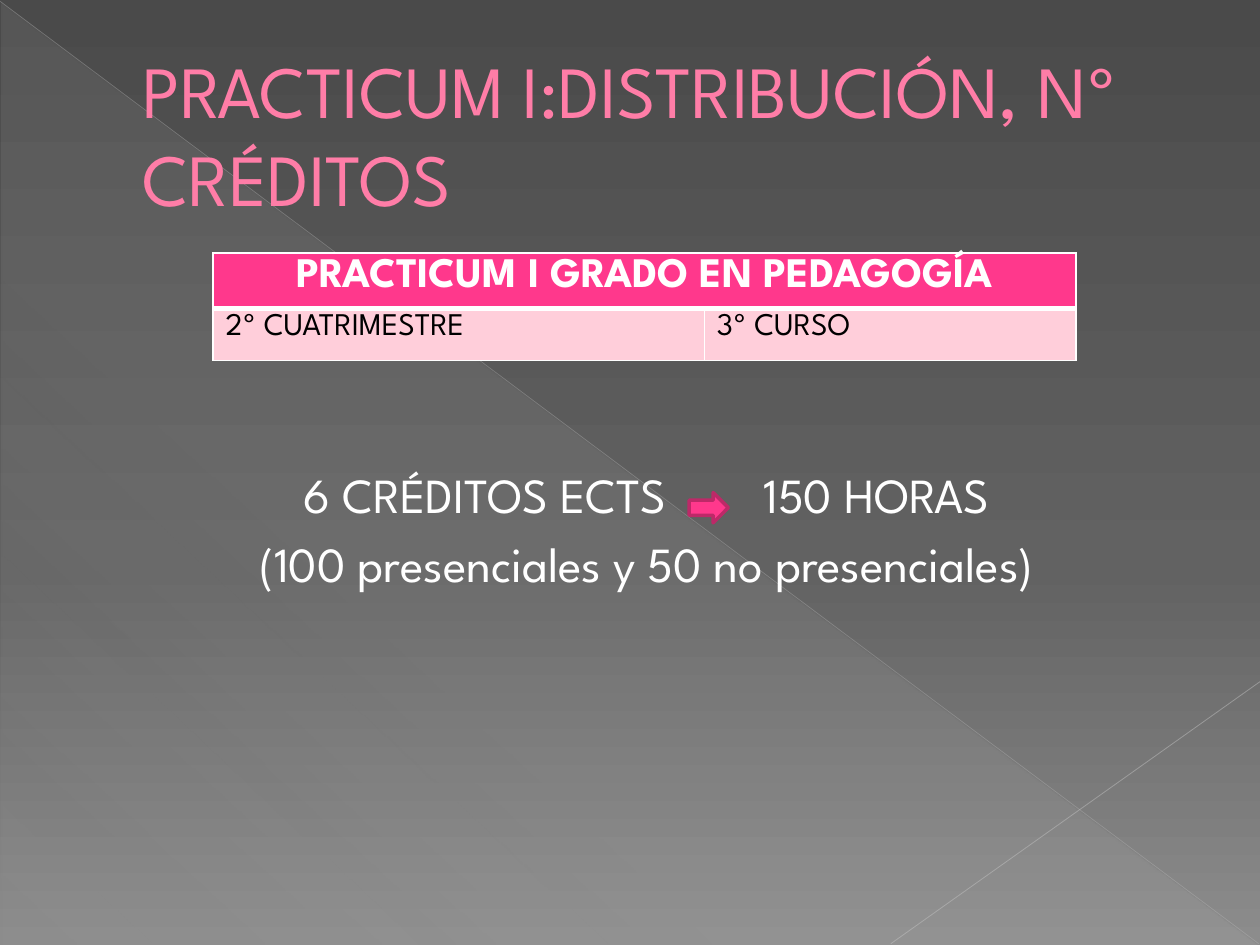
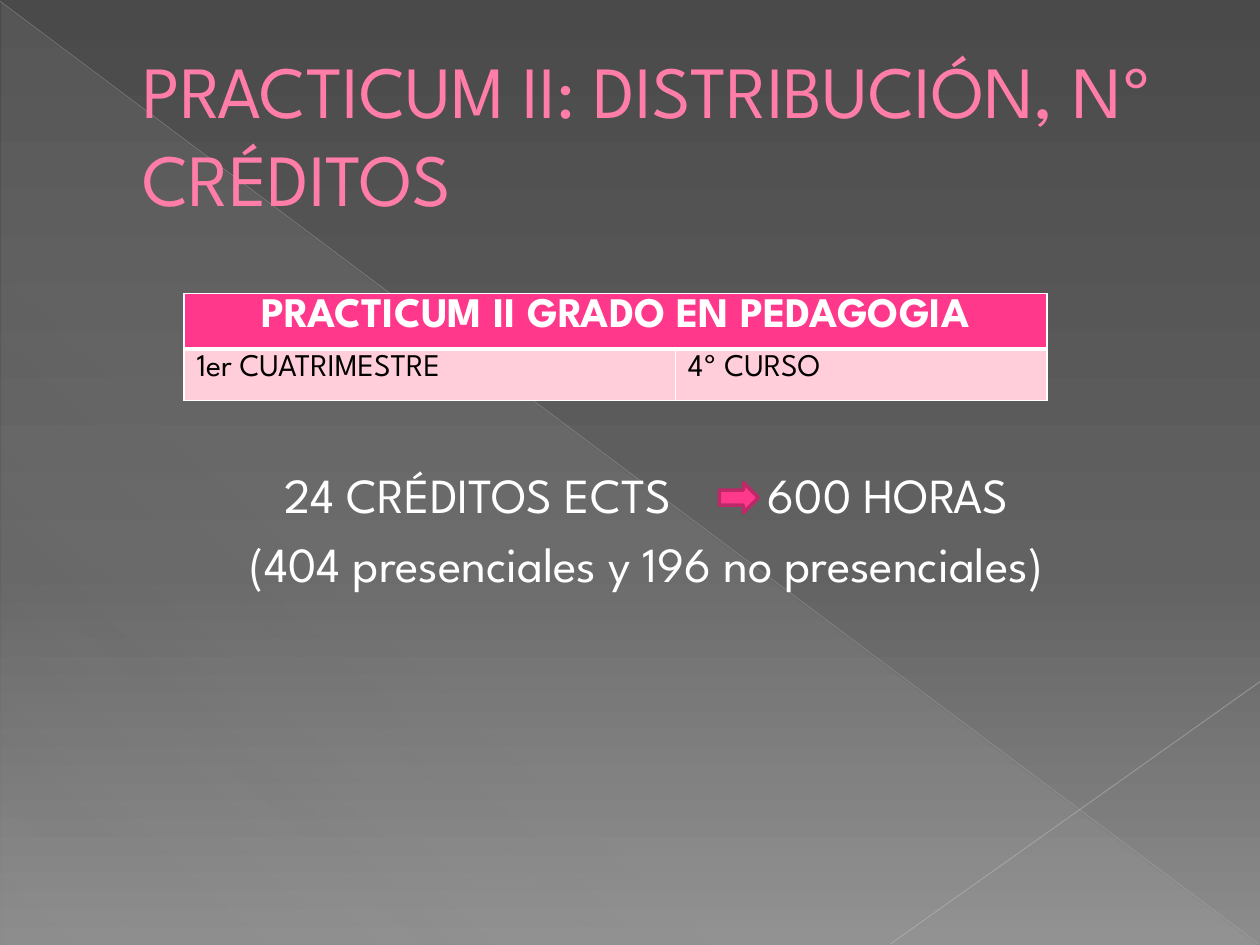
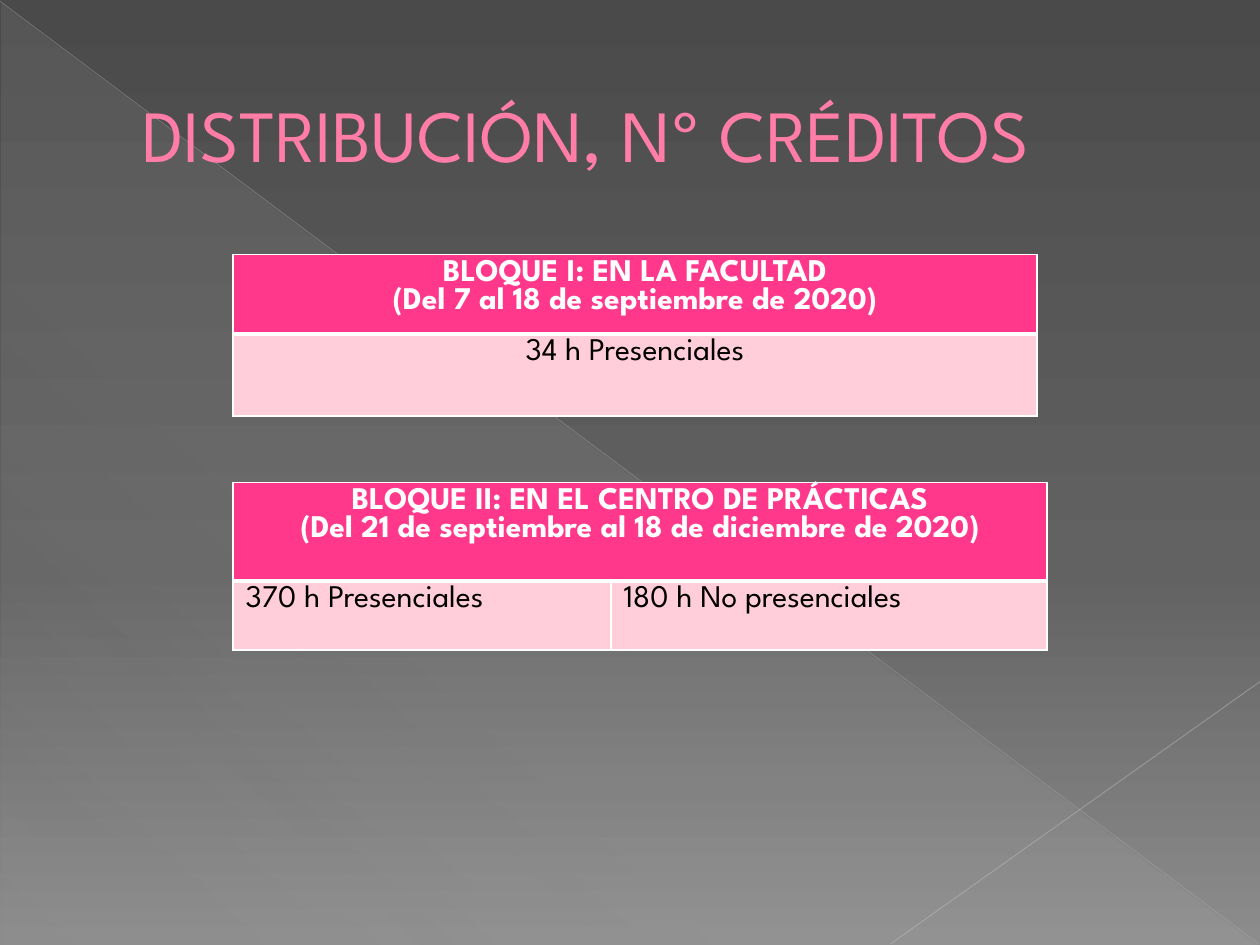
from lxml.etree import SubElement
from pptx import Presentation
from pptx.dml.color import RGBColor
from pptx.enum.shapes import MSO_CONNECTOR, MSO_SHAPE
from pptx.enum.text import MSO_ANCHOR, PP_ALIGN
from pptx.oxml.ns import qn
from pptx.util import Inches, Pt

FONT = "League Spartan"
WHITE, BLACK = "FFFFFF", "000000"
PINK, PALE_PINK, TITLE_PINK, DARK_PINK = "FF388C", "FFCEDA", "FF7DA7", "BD2968"
BACKDROP = [(0, "4A4A4A", 100), (60, "626262", 100), (100, "8C8C8C", 100)]
VEIL = [(0, "D2D2D2", 10), (70, "D2D2D2", 8), (100, "D2D2D2", 1)]
DIAGONALS = [((0, 0.01), (9.99, 7.49), "BFBFBF", 0.39, 35),
             ((10, 5.41), (7.07, 7.49), "C6C6C6", 0.47, 45)]
TITLE_BOX = (0.5, 0.29, 9, 1.53)
HOURS_BOX = (0.63, 3.64, 9, 1.2)


def rgb(value):
    return RGBColor.from_string(value)


def inches(*values):
    return [Inches(v) for v in values]


def set_all(target, **values):
    for name, value in values.items():
        setattr(target, name, value)


def set_alpha(color, percent):
    SubElement(color, qn("a:alpha")).set("val", str(percent * 1000))


def set_gradient(fill, element, stops, angle):
    """Fill with (position, colour, opacity) stops, the angle running clockwise."""
    fill.gradient()
    grad = element.xpath(".//a:gradFill")[0]
    for child in list(grad):
        grad.remove(child)
    stop_list = SubElement(grad, qn("a:gsLst"))
    for position, value, opacity in stops:
        stop = SubElement(stop_list, qn("a:gs"))
        stop.set("pos", str(position * 1000))
        color = SubElement(stop, qn("a:srgbClr"))
        color.set("val", value)
        set_alpha(color, opacity)
    SubElement(grad, qn("a:lin")).set("ang", str(angle * 60000))


def add_run(p, text, size, color, bold=False):
    r = p.add_run()
    r.text = text
    set_all(r.font, name=FONT, size=Pt(size), bold=bold)
    r.font.color.rgb = rgb(color)
    return r


def add_text_box(s, box):
    tf = s.shapes.add_textbox(*inches(*box)).text_frame
    tf.word_wrap = True
    return tf


def add_backdrop(s):
    set_gradient(s.background.fill, s.element, BACKDROP, 90)
    veil = s.shapes.add_shape(MSO_SHAPE.RIGHT_TRIANGLE, *inches(0.01, 0.02, 9.98, 7.48))
    veil.shadow.inherit = False
    veil.line.fill.background()
    set_gradient(veil.fill, veil.element, VEIL, 133)
    for start, end, color, width, opacity in DIAGONALS:
        line = s.shapes.add_connector(MSO_CONNECTOR.STRAIGHT, *inches(*start, *end))
        line.line.color.rgb = rgb(color)
        line.line.width = Pt(width)
        set_alpha(line.element.xpath(".//a:ln//a:srgbClr")[0], opacity)
        SubElement(line.element.spPr, qn("a:effectLst"))


def add_title(s, text):
    tf = add_text_box(s, TITLE_BOX)
    set_all(tf, vertical_anchor=MSO_ANCHOR.MIDDLE, margin_left=Inches(0.63))
    add_run(tf.paragraphs[0], text, 42, TITLE_PINK)


def set_borders(cell, bottom):
    tc_pr = cell._tc.get_or_add_tcPr()
    for side, width in (("L", 1), ("R", 1), ("T", 1), ("B", bottom)):
        ln = SubElement(tc_pr, qn("a:ln" + side))
        ln.set("w", str(Pt(width)))
        fill = SubElement(ln, qn("a:solidFill"))
        SubElement(fill, qn("a:srgbClr")).set("val", WHITE)


def fill_cell(cell, lines, size, color, fill, align, bold=False, bottom=1):
    set_borders(cell, bottom)
    cell.fill.solid()
    cell.fill.fore_color.rgb = rgb(fill)
    set_all(cell, margin_top=Inches(0.04), margin_bottom=Inches(0.02))
    tf = cell.text_frame
    for i, text in enumerate(lines):
        p = tf.add_paragraph() if i else tf.paragraphs[0]
        set_all(p, alignment=align, line_spacing=0.95)
        add_run(p, text, size, color, bold)


def add_block_table(s, left, top, widths, heights, heading, details, size=18):
    """A heading across all columns above one row of details."""
    frame = s.shapes.add_table(2, len(widths),
                               *inches(left, top, sum(widths), sum(heights)))
    table = frame.table
    for column, width in zip(table.columns, widths):
        column.width = Inches(width)
    for row, height in zip(table.rows, heights):
        row.height = Inches(height)
    last = len(widths) - 1
    if last:
        table.cell(0, 0).merge(table.cell(0, last))
    for i, detail in enumerate(details):
        fill_cell(table.cell(0, i), heading if i == 0 else [], size, WHITE, PINK,
                  PP_ALIGN.CENTER, bold=True, bottom=3)
        fill_cell(table.cell(1, i), [detail], 18, BLACK, PALE_PINK,
                  PP_ALIGN.LEFT if last else PP_ALIGN.CENTER)


def add_hours(s, credits, hours, split, arrow_at):
    tf = add_text_box(s, HOURS_BOX)
    p = tf.paragraphs[0]
    set_all(p, alignment=PP_ALIGN.CENTER, space_after=Pt(5.6))
    add_run(p, credits, 28, WHITE)
    gap = add_run(p, " ", 28, WHITE)
    gap.font._element.set("spc", "4850")  # widened to leave room for the arrow
    add_run(p, hours, 28, WHITE)
    p = tf.add_paragraph()
    p.alignment = PP_ALIGN.CENTER
    add_run(p, split, 28, WHITE)

    arrow = s.shapes.add_shape(MSO_SHAPE.RIGHT_ARROW, *inches(*arrow_at, 0.31, 0.24))
    arrow.shadow.inherit = False
    arrow.fill.solid()
    arrow.fill.fore_color.rgb = rgb(PINK)
    arrow.line.color.rgb = rgb(DARK_PINK)
    arrow.line.width = Pt(2)


def new_slide(prs, title):
    s = prs.slides.add_slide(prs.slide_layouts[6])
    add_backdrop(s)
    add_title(s, title)
    return s


def practicum_slide(prs, title, table_at, heading, details, **hours):
    s = new_slide(prs, title)
    add_block_table(s, *table_at, (3.9, 2.95), (0.41, 0.41), [heading], details, size=24)
    add_hours(s, **hours)


def blocks_slide(prs):
    s = new_slide(prs, "DISTRIBUCIÓN, Nº CRÉDITOS")
    add_block_table(s, 1.85, 2.02, (6.38,), (0.56, 0.65),
                    ["BLOQUE I: EN LA FACULTAD", "(Del 7 al 18 de septiembre de 2020)"],
                    ["34 h Presenciales"])
    add_block_table(s, 1.85, 3.83, (3, 3.46), (0.78, 0.55),
                    ["BLOQUE II: EN EL CENTRO DE PRÁCTICAS",
                     "(Del 21 de septiembre al 18 de diciembre de 2020)"],
                    ["370 h Presenciales", "180 h No presenciales"])


def main():
    prs = Presentation()
    prs.slide_width, prs.slide_height = inches(10, 7.5)
    practicum_slide(prs, "PRACTICUM I:DISTRIBUCIÓN, Nº CRÉDITOS", (1.69, 2.01),
                    "PRACTICUM I GRADO EN PEDAGOGÍA", ["2º CUATRIMESTRE", "3º CURSO"],
                    credits="6 CRÉDITOS ECTS", hours="150 HORAS",
                    split="(100 presenciales y 50 no presenciales)",
                    arrow_at=(5.47, 3.91))
    practicum_slide(prs, "PRACTICUM II: DISTRIBUCIÓN, Nº CRÉDITOS", (1.46, 2.33),
                    "PRACTICUM II GRADO EN PEDAGOGIA", ["1er CUATRIMESTRE", "4º CURSO"],
                    credits="24 CRÉDITOS ECTS", hours="600 HORAS",
                    split="(404 presenciales y 196 no presenciales)",
                    arrow_at=(5.71, 3.83))
    blocks_slide(prs)
    prs.save("out.pptx")


if __name__ == "__main__":
    main()
